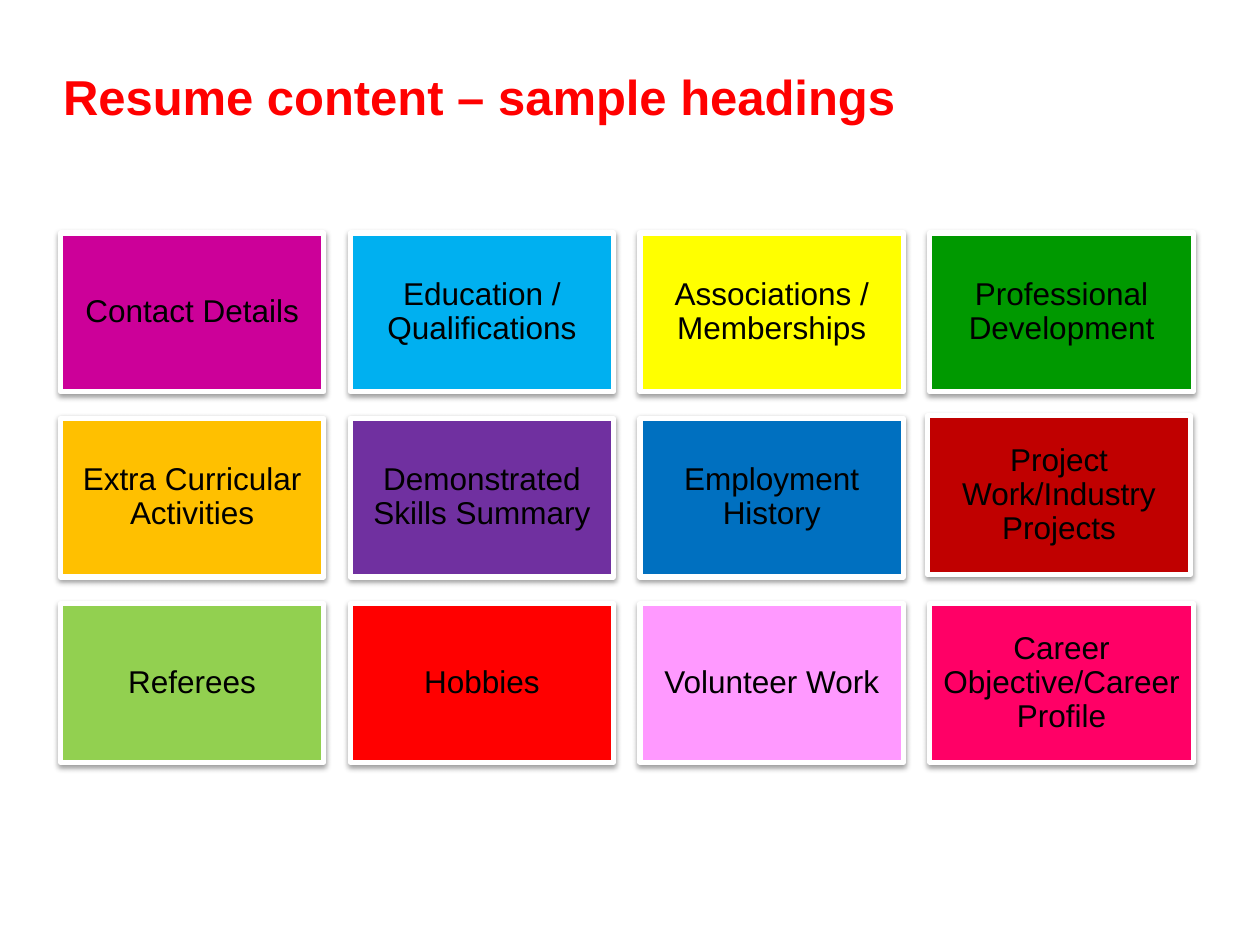
from lxml.etree import SubElement
from pptx import Presentation
from pptx.dml.color import RGBColor
from pptx.enum.shapes import MSO_SHAPE
from pptx.enum.text import MSO_ANCHOR, PP_ALIGN
from pptx.oxml.ns import qn
from pptx.util import Inches, Pt


def paint(color_format, hex_color):
    color_format.rgb = RGBColor.from_string(hex_color)


def add_soft_shadow(sp):
    sp.shadow.inherit = False
    effects = sp._element.spPr.find(qn("a:effectLst"))
    shadow = SubElement(effects, qn("a:outerShdw"), blurRad="40000", dist="20000",
                        dir="5400000", rotWithShape="0")
    color = SubElement(shadow, qn("a:srgbClr"), val="000000")
    SubElement(color, qn("a:alpha"), val="38000")


HEADINGS = [
    [("Contact Details", "CC0099"), ("Education / Qualifications", "00B0F0"),
     ("Associations / Memberships", "FFFF00"), ("Professional Development", "009900")],
    [("Extra Curricular Activities", "FFC000"), ("Demonstrated Skills Summary", "7030A0"),
     ("Employment History", "0070C0"), ("Project Work/Industry Projects", "C00000")],
    [("Referees", "92D050"), ("Hobbies", "FF0000"),
     ("Volunteer Work", "FF99FF"), ("Career Objective/Career Profile", "FF0066")],
]
LEFT, TOP = 0.48, 1.85
CARD_W, CARD_H = 2.09, 1.26
GAP = 0.21
NUDGED = {"Project Work/Industry Projects": -0.02}  # sits slightly up and left

prs = Presentation()
prs.slide_width, prs.slide_height = Inches(10), Inches(7.5)
s = prs.slides.add_slide(prs.slide_layouts[5])

title = s.shapes.title
title.left, title.top = Inches(0.4), Inches(0.51)
title.width, title.height = Inches(9.6), Inches(0.57)
title.text = "Resume content – sample headings"
title.text_frame.vertical_anchor = MSO_ANCHOR.MIDDLE
p = title.text_frame.paragraphs[0]
p.alignment = PP_ALIGN.LEFT
p.line_spacing = 0.85
p.font.name, p.font.size, p.font.bold = "Arial", Pt(28), True
paint(p.font.color, "FF0000")

for row, cards in enumerate(HEADINGS):
    for col, (heading, fill) in enumerate(cards):
        nudge = NUDGED.get(heading, 0)
        sp = s.shapes.add_shape(
            MSO_SHAPE.RECTANGLE,
            Inches(LEFT + col * (CARD_W + GAP) + nudge),
            Inches(TOP + row * (CARD_H + GAP) + nudge),
            Inches(CARD_W), Inches(CARD_H))
        sp.fill.solid()
        paint(sp.fill.fore_color, fill)
        paint(sp.line.color, "FFFFFF")
        sp.line.width = Pt(3)
        add_soft_shadow(sp)

        tf = sp.text_frame
        tf.word_wrap = True
        tf.vertical_anchor = MSO_ANCHOR.MIDDLE
        tf.margin_left = tf.margin_right = tf.margin_top = tf.margin_bottom = Inches(0.07)
        p = tf.paragraphs[0]
        p.text = heading
        p.alignment = PP_ALIGN.CENTER
        p.line_spacing = 0.9
        p.font.name, p.font.size = "Arial", Pt(18)
        paint(p.font.color, "000000")

prs.save("out.pptx")
